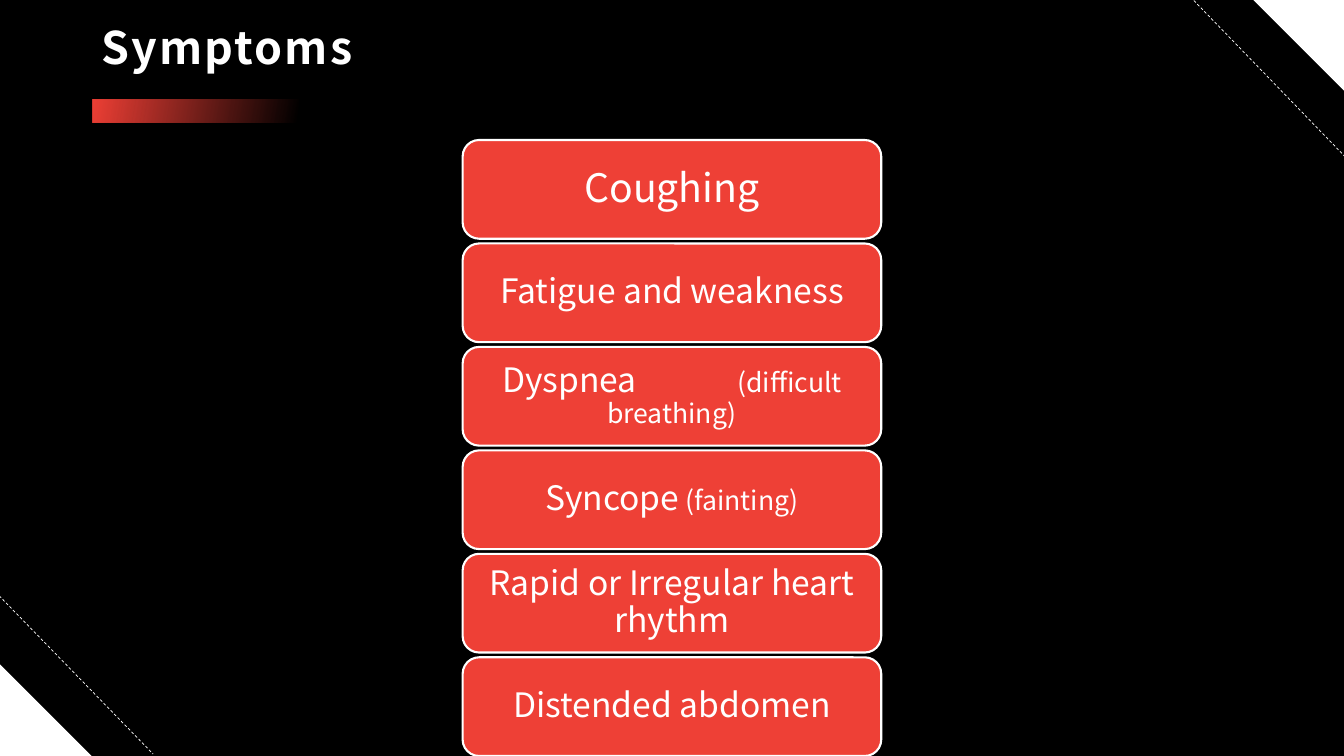
from dataclasses import dataclass
from typing import Optional

from lxml.etree import SubElement
from pptx import Presentation
from pptx.dml.color import RGBColor
from pptx.enum.dml import MSO_LINE
from pptx.enum.shapes import MSO_CONNECTOR, MSO_SHAPE
from pptx.enum.text import MSO_ANCHOR, MSO_AUTO_SIZE, PP_ALIGN
from pptx.oxml.ns import qn
from pptx.util import Pt

COLOURS = {"background": "000000", "accent": "EE4036", "light": "FFFFFF"}
SLIDE_WIDTH, SLIDE_HEIGHT = 960, 540
CARD_WIDTH, CARD_HEIGHT = 299, 70.5
CARD_TOP, CARD_PITCH = 100, 73.9
CORNER_SIZE = 65.5


@dataclass
class Symptom:
    name: str
    explanation: str = ""
    size: float = 24
    tab_stop: Optional[float] = None


@dataclass
class Corner:
    left: float
    top: float
    rotation: float
    dash_start: tuple[float, float]
    dash_end: tuple[float, float]


SYMPTOMS = [
    Symptom("Coughing", size=28),
    Symptom("Fatigue and weakness"),
    Symptom("Dyspnea", "\t(difficult breathing)", tab_stop=168),
    Symptom("Syncope", " (fainting)"),
    Symptom("Rapid or Irregular heart rhythm"),
    Symptom("Distended abdomen"),
]
CORNERS = [
    Corner(0, SLIDE_HEIGHT - CORNER_SIZE, 0, (-0.7, 425.5), (109.4, 538.6)),
    Corner(SLIDE_WIDTH - CORNER_SIZE, -0.7, 180, (850.3, -2.2), (960.5, 111.6)),
]


def colour(name: str) -> RGBColor:
    return RGBColor.from_string(COLOURS[name])


def apply(target, values: dict) -> None:
    for attribute, value in values.items():
        setattr(target, attribute, value)


def add_run(paragraph, text: str, size: float, font_name: str, bold: bool = False):
    run = paragraph.add_run()
    run.text = text
    apply(run.font, {"size": Pt(size), "name": font_name, "bold": bold})
    run.font.color.rgb = colour("light")
    return run


def add_filled_shape(slide, kind, left: float, top: float, width: float,
                     height: float, fill: str):
    shape = slide.shapes.add_shape(kind, Pt(left), Pt(top), Pt(width), Pt(height))
    shape.shadow.inherit = False
    shape.fill.solid()
    shape.fill.fore_color.rgb = colour(fill)
    shape.line.fill.background()
    return shape


def add_corner(slide, corner: Corner) -> None:
    triangle = add_filled_shape(slide, MSO_SHAPE.RIGHT_TRIANGLE, corner.left,
                                corner.top, CORNER_SIZE, CORNER_SIZE, "light")
    triangle.rotation = corner.rotation
    ends = [Pt(value) for value in corner.dash_start + corner.dash_end]
    dash = slide.shapes.add_connector(MSO_CONNECTOR.STRAIGHT, *ends)
    apply(dash.line, {"width": Pt(0.5), "dash_style": MSO_LINE.DASH})
    dash.line.color.rgb = colour("light")
    SubElement(dash._element.spPr, qn("a:effectLst"))


def add_title_bar(slide) -> None:
    bar = add_filled_shape(slide, MSO_SHAPE.RECTANGLE, 66, 71, 147, 16.8, "accent")
    bar.fill.gradient()
    bar.fill.gradient_angle = 350
    for stop, position in zip(bar.fill.gradient_stops, (0, 0.99)):
        stop.color.rgb = colour("accent")
        stop.position = position
    # The far end fades out completely
    end_colour = bar._element.spPr.findall(".//" + qn("a:srgbClr"))[-1]
    SubElement(end_colour, qn("a:alpha"), val="0")


def add_title(slide, text: str) -> None:
    title = slide.shapes.title
    apply(title, {"left": Pt(65.5), "top": Pt(13), "width": Pt(829),
                  "height": Pt(46)})
    apply(title.text_frame, {"vertical_anchor": MSO_ANCHOR.MIDDLE,
                             "word_wrap": True, "auto_size": MSO_AUTO_SIZE.NONE})
    paragraph = title.text_frame.paragraphs[0]
    apply(paragraph, {"alignment": PP_ALIGN.LEFT, "line_spacing": 0.9,
                      "space_before": Pt(0)})
    run = add_run(paragraph, text, 32, "Noto Sans CJK TC", bold=True)
    run.font._element.set("spc", "150")


def add_symptom(slide, symptom: Symptom, top: float) -> None:
    card = add_filled_shape(slide, MSO_SHAPE.ROUNDED_RECTANGLE,
                            (SLIDE_WIDTH - CARD_WIDTH) / 2, top,
                            CARD_WIDTH, CARD_HEIGHT, "accent")
    card.line.color.rgb = colour("light")
    card.line.width = Pt(1.5)
    apply(card.text_frame, {"word_wrap": True, "vertical_anchor": MSO_ANCHOR.MIDDLE,
                            "margin_left": Pt(7.2), "margin_right": Pt(7.2),
                            "margin_top": Pt(3.6), "margin_bottom": Pt(3.6)})
    paragraph = card.text_frame.paragraphs[0]
    if symptom.tab_stop is not None:
        tabs = SubElement(paragraph._p.get_or_add_pPr(), qn("a:tabLst"))
        SubElement(tabs, qn("a:tab"), pos=str(Pt(symptom.tab_stop)), algn="l")
    apply(paragraph, {"alignment": PP_ALIGN.CENTER, "line_spacing": 0.9})
    add_run(paragraph, symptom.name, symptom.size, "Noto Sans CJK JP")
    if symptom.explanation:
        add_run(paragraph, symptom.explanation, 19, "Noto Sans CJK JP")


def main() -> None:
    presentation = Presentation()
    apply(presentation, {"slide_width": Pt(SLIDE_WIDTH),
                         "slide_height": Pt(SLIDE_HEIGHT)})
    slide = presentation.slides.add_slide(presentation.slide_layouts[5])
    slide.background.fill.solid()
    slide.background.fill.fore_color.rgb = colour("background")

    # Corner decoration
    for corner in CORNERS:
        add_corner(slide, corner)

    # Title and fading bar
    add_title_bar(slide)
    add_title(slide, "Symptoms")

    # Stack of symptom cards
    for index, symptom in enumerate(SYMPTOMS):
        add_symptom(slide, symptom, CARD_TOP + index * CARD_PITCH)

    presentation.save("out.pptx")


if __name__ == "__main__":
    main()
